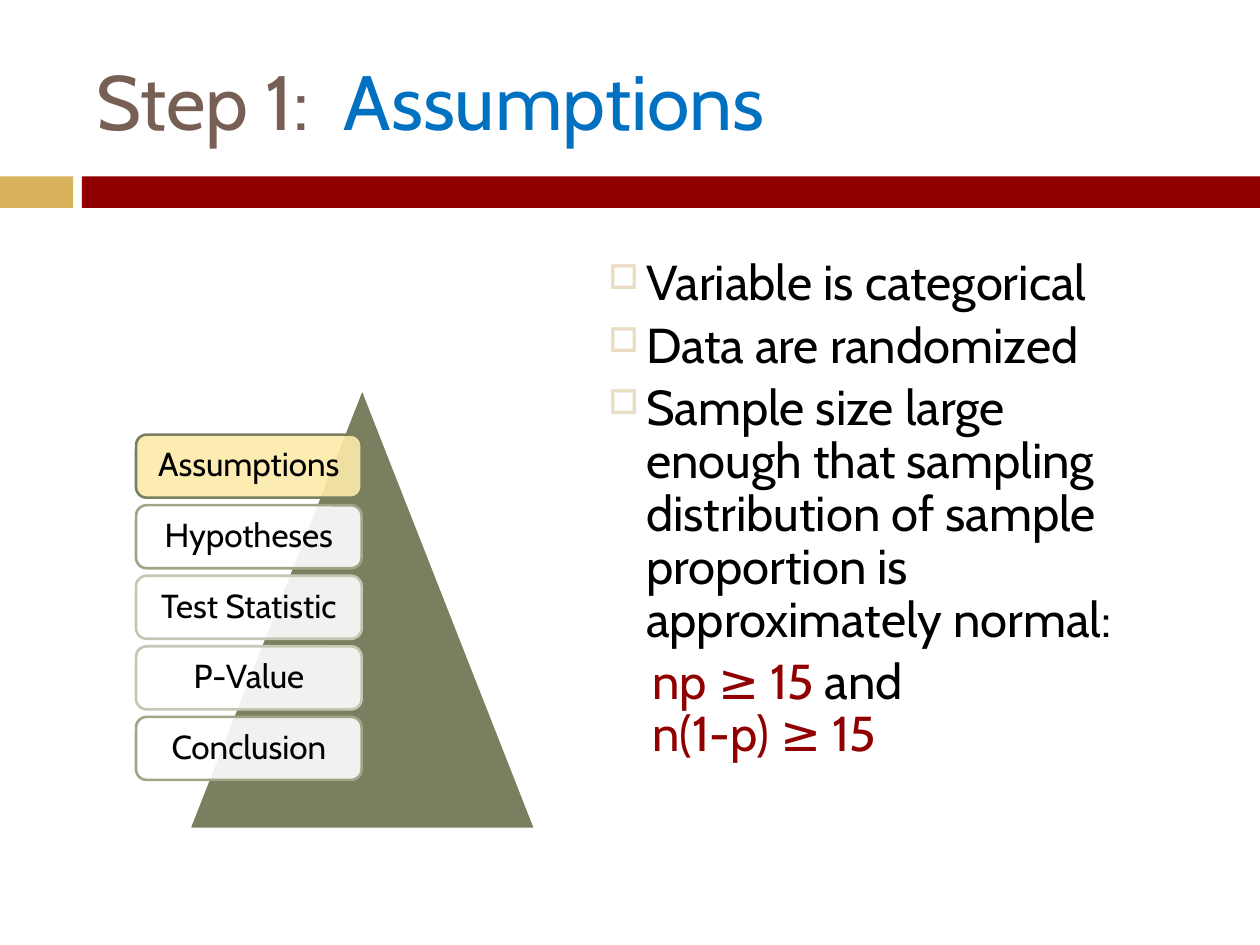
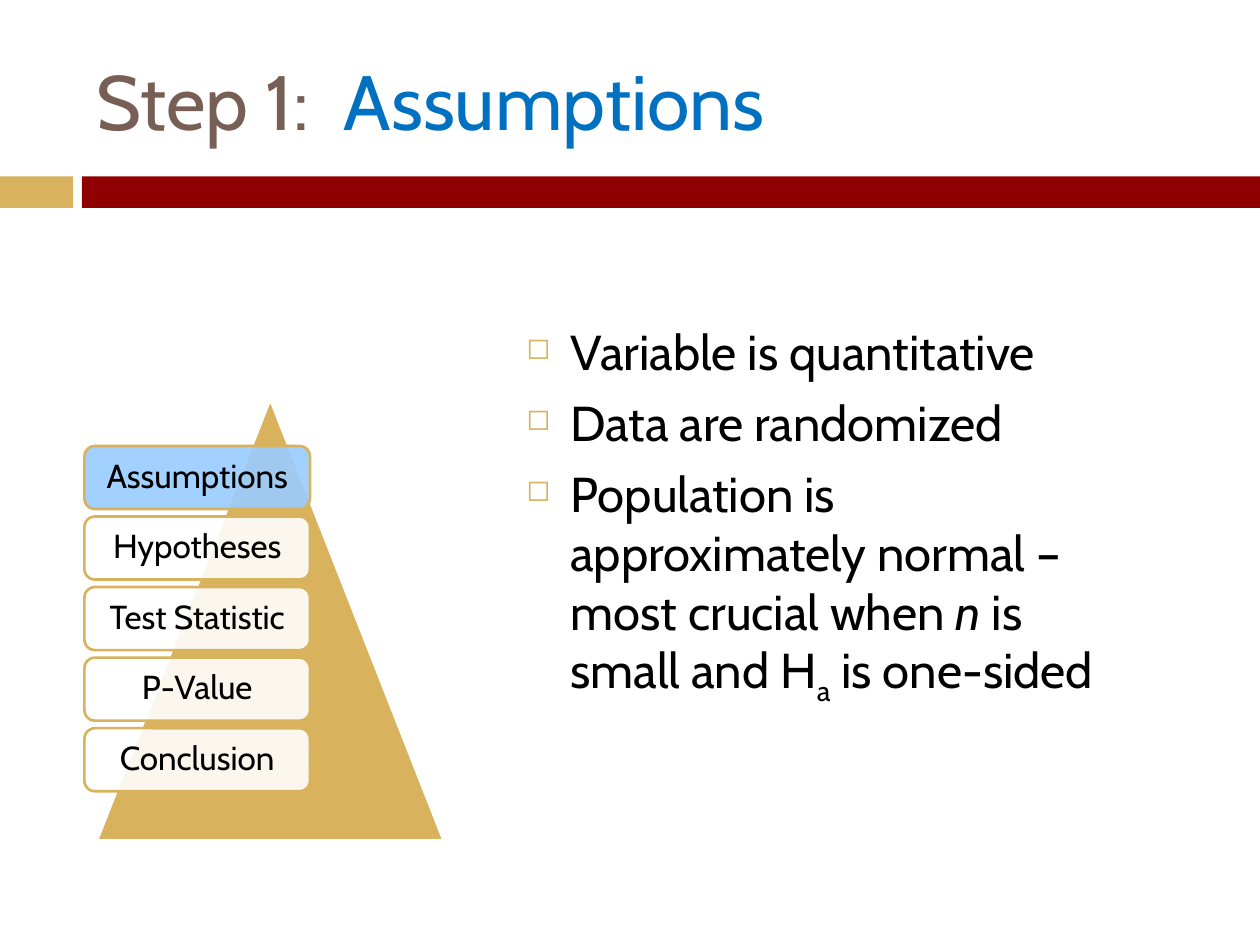
"""Build two slides on the assumptions step of a significance test."""
import pptx
import pptx.dml.color
import pptx.enum.shapes
import pptx.enum.text
import pptx.oxml.ns
import pptx.util
from lxml import etree

COLORS = {
    "white": "FFFFFF", "black": "000000", "red": "900000", "gold": "D8B25C",
    "brown": "775F55", "blue": "0070C0", "olive": "7A7F5F", "sage": "A1A587",
    "mist": "C4C7B3", "cream": "FCEAAA", "sky": "99CCFF", "sand": "EBDDC3",
}
FONT = "Cabin"
TITLE = [("Step 1:  ", {"color": "brown"}), ("Assumptions", {"color": "blue"})]
TITLE_BOX = (0.67, 0.25, 8.92, 1.08)
BANDS = [((0, 1.4, 0.58, 0.25), "gold"), ((0.65, 1.4, 9.35, 0.25), "red")]
STEPS = ["Assumptions", "Hypotheses", "Test Statistic", "P-Value", "Conclusion"]
TRIANGLE_SIZE = (2.75, 3.5)
STEP_SIZE = (1.79, 0.5)
STEP_OFFSET = 0.37
STEP_PITCH = 0.56

CATEGORICAL_BULLET = {
    "left": 0.7, "first": -0.3, "line": 0.9, "before": 5.5,
    "bullet": ("□", "sand", 70),
}
CONDITION = {"left": 0.75, "first": 0, "line": 0.9, "before": 5}
QUANTITATIVE_BULLET = {
    "left": 0.35, "first": -0.35, "line": 1, "before": 7,
    "bullet": ("◻", "gold", 60),
}

SLIDES = [
    {
        "triangle": (1.5, 3.08), "triangle_fill": "olive", "step_left": 1.08,
        "current_fill": "cream",
        "step_lines": ["olive", "sage", "mist", "mist", "sage"],
        "body_box": (4.33, 2, 4.92, 4.92),
        "body": [
            (CATEGORICAL_BULLET, [("Variable is categorical", {})]),
            (CATEGORICAL_BULLET, [("Data are randomized", {})]),
            (CATEGORICAL_BULLET, [(
                "Sample size large enough that sampling distribution of "
                "sample proportion is approximately normal:", {})]),
            (CONDITION, [
                ("np ≥ 15 ", {"color": "red"}), ("and", {}), ("\n", {}),
                ("n(1-p) ≥ 15", {"color": "red"})]),
        ],
    },
    {
        "triangle": (0.77, 3.17), "triangle_fill": "gold", "step_left": 0.67,
        "current_fill": "sky",
        "step_lines": ["gold"] * len(STEPS),
        "body_box": (4.08, 2.5, 5, 4.67),
        "body": [
            (QUANTITATIVE_BULLET, [("Variable is quantitative", {})]),
            (QUANTITATIVE_BULLET, [("Data are randomized", {})]),
            (QUANTITATIVE_BULLET, [
                ("Population is approximately normal – most crucial when ", {}),
                ("n", {"italic": True}), (" is small and H", {}),
                ("a", {"baseline": -25}), (" is one-sided", {})]),
        ],
    },
]


def color(name):
    return pptx.dml.color.RGBColor.from_string(COLORS[name])


def add_xml(parent, tag, **attributes):
    return etree.SubElement(parent, pptx.oxml.ns.qn(tag), attributes)


def add_runs(paragraph, runs, size):
    for text, style in runs:
        if text == "\n":
            paragraph.add_line_break()
            continue
        run = paragraph.add_run()
        run.text = text
        run.font.name = FONT
        run.font.size = pptx.util.Pt(size)
        run.font.color.rgb = color(style.get("color", "black"))
        if style.get("italic"):
            run.font.italic = True
        if "baseline" in style:
            run.font._element.set("baseline", str(style["baseline"] * 1000))


def add_text_box(slide, box):
    frame = slide.shapes.add_textbox(*map(pptx.util.Inches, box)).text_frame
    frame.word_wrap = True
    return frame


def add_shape(slide, kind, box, fill, line=None):
    shape = slide.shapes.add_shape(
        getattr(pptx.enum.shapes.MSO_SHAPE, kind), *map(pptx.util.Inches, box))
    shape.shadow.inherit = False
    shape.fill.solid()
    shape.fill.fore_color.rgb = color(fill)
    if line:
        shape.line.color.rgb = color(line)
        shape.line.width = pptx.util.Pt(1.5)
    else:
        shape.line.fill.background()
    return shape


def format_paragraph(paragraph, layout, is_first):
    properties = paragraph._p.get_or_add_pPr()
    properties.set("marL", str(pptx.util.Inches(layout["left"])))
    properties.set("indent", str(pptx.util.Inches(layout["first"])))
    if "bullet" in layout:
        character, bullet_color, percent = layout["bullet"]
        add_xml(add_xml(properties, "a:buClr"), "a:srgbClr", val=COLORS[bullet_color])
        add_xml(properties, "a:buSzPct", val=str(percent * 1000))
        add_xml(properties, "a:buChar", char=character)
    paragraph.line_spacing = float(layout["line"])
    paragraph.space_before = pptx.util.Pt(0 if is_first else layout["before"])


def add_frame(slide):
    for box, fill in BANDS:
        add_shape(slide, "RECTANGLE", box, fill)
    frame = add_text_box(slide, TITLE_BOX)
    frame.vertical_anchor = pptx.enum.text.MSO_ANCHOR.MIDDLE
    add_runs(frame.paragraphs[0], TITLE, 44)


def add_body(slide, content):
    frame = add_text_box(slide, content["body_box"])
    for index, (layout, runs) in enumerate(content["body"]):
        paragraph = frame.add_paragraph() if index else frame.paragraphs[0]
        format_paragraph(paragraph, layout, index == 0)
        add_runs(paragraph, runs, 28)


def add_pyramid(slide, content):
    add_shape(slide, "ISOSCELES_TRIANGLE", content["triangle"] + TRIANGLE_SIZE,
              content["triangle_fill"], "white")
    first_top = content["triangle"][1] + STEP_OFFSET
    for index, (step, line) in enumerate(zip(STEPS, content["step_lines"])):
        box = (content["step_left"], first_top + index * STEP_PITCH) + STEP_SIZE
        fill = "white" if index else content["current_fill"]
        shape = add_shape(slide, "ROUNDED_RECTANGLE", box, fill, line)
        fill_color = shape._element.xpath("./p:spPr/a:solidFill/a:srgbClr")[0]
        add_xml(fill_color, "a:alpha", val="90000")
        frame = shape.text_frame
        frame.word_wrap = True
        frame.vertical_anchor = pptx.enum.text.MSO_ANCHOR.MIDDLE
        frame.margin_left = frame.margin_right = pptx.util.Inches(0.08)
        frame.margin_top = frame.margin_bottom = pptx.util.Inches(0.08)
        paragraph = frame.paragraphs[0]
        paragraph.alignment = pptx.enum.text.PP_ALIGN.CENTER
        paragraph.line_spacing = 0.9
        add_runs(paragraph, [(step, {})], 19)


def main():
    presentation = pptx.Presentation()
    presentation.slide_width = pptx.util.Inches(10)
    presentation.slide_height = pptx.util.Inches(7.5)
    for content in SLIDES:
        slide = presentation.slides.add_slide(presentation.slide_layouts[6])
        add_frame(slide)
        add_body(slide, content)
        add_pyramid(slide, content)
    presentation.save("out.pptx")


if __name__ == "__main__":
    main()
